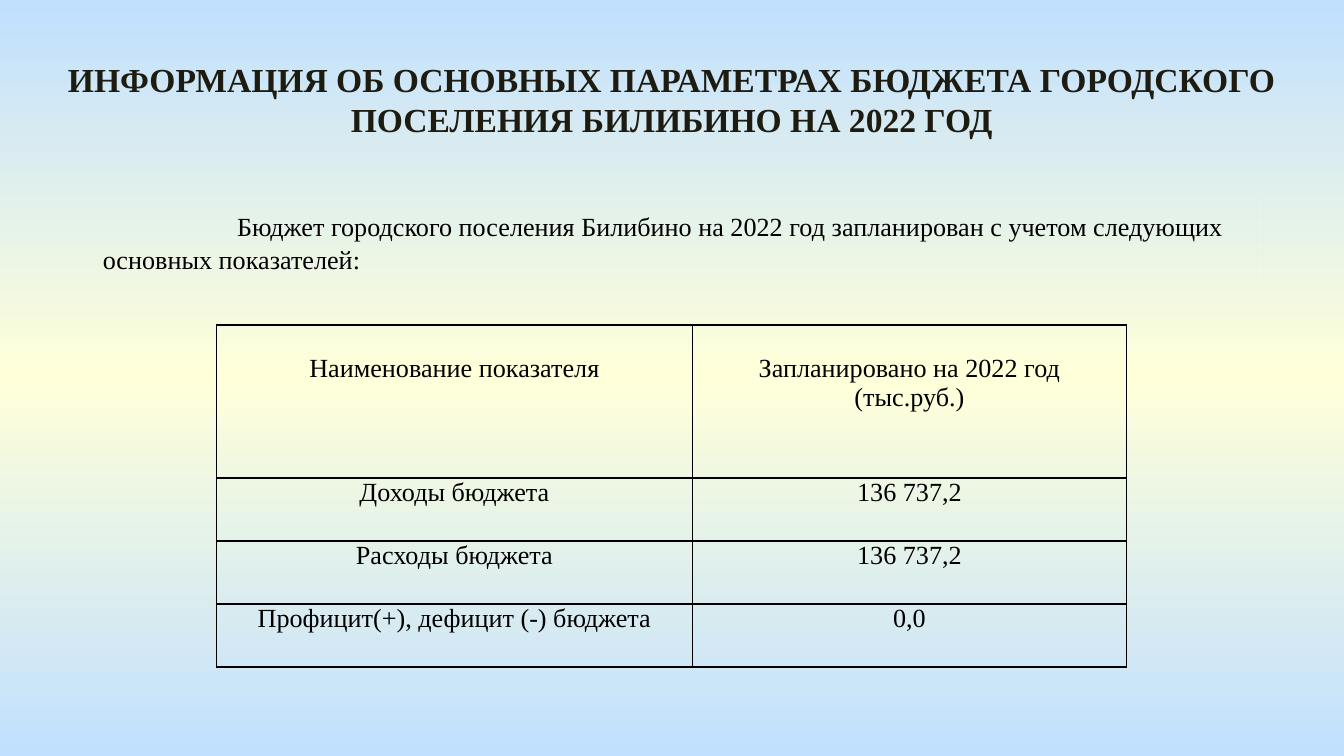
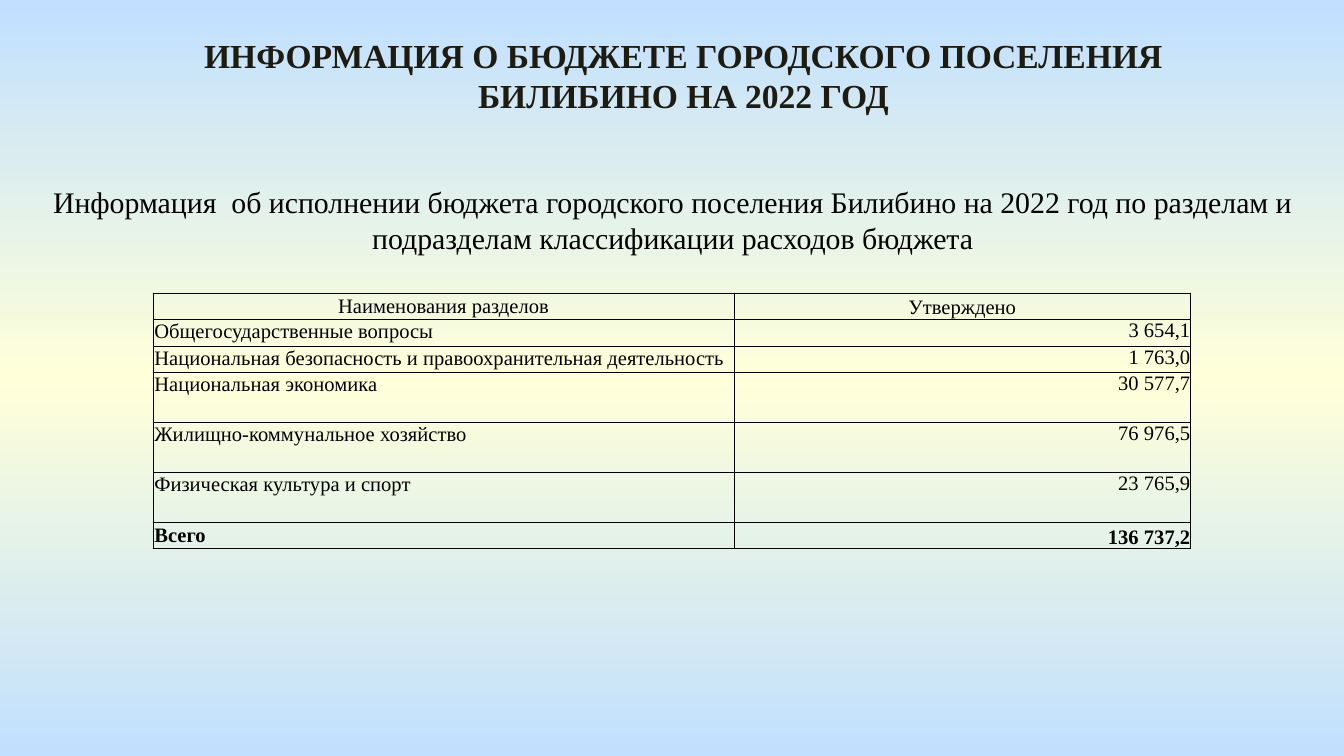
from copy import deepcopy

from lxml.etree import SubElement
from pptx import Presentation
from pptx.dml.color import RGBColor
from pptx.enum.shapes import MSO_SHAPE
from pptx.enum.text import MSO_ANCHOR, PP_ALIGN
from pptx.oxml.ns import qn
from pptx.util import Pt

# Shared look
SKY = RGBColor(0xC1, 0xE0, 0xFF)
CREAM = RGBColor(0xFF, 0xFF, 0xD9)
TITLE_INK = RGBColor(0x1E, 0x1C, 0x11)
BLACK = RGBColor(0, 0, 0)
FONT = "Times New Roman"

# Table contents
PARAMETERS = [
    ("Наименование показателя", "Запланировано на 2022 год (тыс.руб.)"),
    ("Доходы бюджета", "136 737,2"),
    ("Расходы бюджета", "136 737,2"),
    ("Профицит(+), дефицит (-) бюджета", "0,0"),
]
SECTIONS = [
    ("Наименования разделов", "Утверждено"),
    ("Общегосударственные вопросы", "3 654,1"),
    ("Национальная безопасность и правоохранительная деятельность", "1 763,0"),
    ("Национальная экономика", "30 577,7"),
    ("Жилищно-коммунальное хозяйство", "76 976,5"),
    ("Физическая культура и спорт", "23 765,9"),
    ("Всего", "136 737,2"),
]


def add_gradient_slide(deck):
    """Blank slide with a vertical sky-cream-sky background."""
    slide = deck.slides.add_slide(deck.slide_layouts[6])
    fill = slide.background.fill
    fill.gradient()
    fill.gradient_angle = 270
    stops = slide.background._cSld.find(".//" + qn("a:gsLst"))
    stops.append(deepcopy(stops[-1]))
    for stop, color, position in zip(fill.gradient_stops, (SKY, CREAM, SKY), (0, 0.5, 1)):
        stop.color.rgb = color
        stop.position = position
    return slide


def write(frame, text, size, align, color=BLACK, bold=False):
    frame.word_wrap = True
    paragraph = frame.paragraphs[0]
    paragraph.text = text
    paragraph.alignment = align
    font = paragraph.font
    font.name, font.size, font.bold = FONT, Pt(size), bold
    font.color.rgb = color
    return paragraph


def add_text(slide, left, top, width, height, text, size, color=BLACK, bold=False):
    box = slide.shapes.add_textbox(Pt(left), Pt(top), Pt(width), Pt(height))
    write(box.text_frame, text, size, PP_ALIGN.CENTER, color, bold)


def add_title(slide, left, top, width, text):
    add_text(slide, left, top, width, 51, text, 18, TITLE_INK, True)


def add_intro(slide, left, top, width, height, text):
    """Indented paragraph on a panel that takes the slide background."""
    panel = slide.shapes.add_shape(
        MSO_SHAPE.RECTANGLE, Pt(left), Pt(top), Pt(width), Pt(height))
    panel.shadow.inherit = False
    panel.line.fill.background()
    panel._element.set("useBgFill", "1")
    frame = panel.text_frame
    frame.vertical_anchor = MSO_ANCHOR.TOP
    frame.margin_top = Pt(6.6)
    paragraph = write(frame, text, 14, PP_ALIGN.LEFT)
    paragraph.line_spacing = Pt(17.7)
    paragraph._p.get_or_add_pPr().set("indent", str(Pt(72)))


def add_borders(cell, width):
    properties = cell._tc.get_or_add_tcPr()
    for side in ("a:lnL", "a:lnR", "a:lnT", "a:lnB"):
        line = SubElement(properties, qn(side), w=str(Pt(width)))
        solid = SubElement(line, qn("a:solidFill"))
        SubElement(solid, qn("a:srgbClr"), val=str(BLACK))


def add_budget_table(slide, left, top, widths, heights, rows, size, border, aligns, insets):
    """Two-column table; insets holds (sides, top) for each column."""
    table = slide.shapes.add_table(
        len(rows), len(widths), Pt(left), Pt(top), Pt(sum(widths)), Pt(sum(heights))).table
    table.first_row = table.horz_banding = False
    for column, width in zip(table.columns, widths):
        column.width = Pt(width)
    for r, (row, height) in enumerate(zip(rows, heights)):
        table.rows[r].height = Pt(height)
        for c, text in enumerate(row):
            cell = table.cell(r, c)
            sides, upper = insets[c]
            cell.margin_left = cell.margin_right = Pt(sides)
            cell.margin_top, cell.margin_bottom = Pt(upper), 0
            add_borders(cell, border)
            cell.fill.background()
            align = aligns[c] if r else PP_ALIGN.CENTER
            write(cell.text_frame, text, size, align, bold=text == "Всего")
    return table


def build_parameters(deck):
    slide = add_gradient_slide(deck)
    add_intro(slide, 48, 105, 629, 46,
              "Бюджет городского поселения Билибино на 2022 год запланирован "
              "с учетом следующих основных показателей:")
    add_title(slide, 25, 28, 670,
              "ИНФОРМАЦИЯ ОБ ОСНОВНЫХ ПАРАМЕТРАХ БЮДЖЕТА ГОРОДСКОГО "
              "ПОСЕЛЕНИЯ БИЛИБИНО НА 2022 ГОД")
    table = add_budget_table(
        slide, 116, 174, (255, 232.5), (82, 33.8, 33.8, 33.8), PARAMETERS, 14, 1,
        (PP_ALIGN.CENTER, PP_ALIGN.CENTER), ((5, 0), (5, 0)))
    # Header text starts one line down
    for c in range(2):
        table.cell(0, c).margin_top = Pt(16)


def build_sections(deck):
    slide = add_gradient_slide(deck)
    add_title(slide, 88, 15, 556.5,
              "ИНФОРМАЦИЯ О БЮДЖЕТЕ ГОРОДСКОГО ПОСЕЛЕНИЯ БИЛИБИНО НА 2022 ГОД")
    add_text(slide, 0.5, 95, 720, 46,
             "Информация  об исполнении бюджета городского поселения Билибино на 2022 год "
             "по разделам и подразделам классификации расходов бюджета", 16)
    table = add_budget_table(
        slide, 82, 157, (311.3, 244.4), (14, 14.4, 13.5, 26.9, 26.9, 26.9, 14),
        SECTIONS, 11, 0.5, (PP_ALIGN.LEFT, PP_ALIGN.RIGHT), ((0.7, 0.7), (0, 0)))
    # Header and total rows
    total = table.cell(len(SECTIONS) - 1, 1)
    total.text_frame.paragraphs[0].font.bold = True
    table.cell(0, 0).vertical_anchor = MSO_ANCHOR.MIDDLE
    table.cell(0, 1).vertical_anchor = total.vertical_anchor = MSO_ANCHOR.BOTTOM


def main():
    deck = Presentation()
    deck.slide_width, deck.slide_height = Pt(720), Pt(405)
    build_parameters(deck)
    build_sections(deck)
    deck.save("out.pptx")


if __name__ == "__main__":
    main()
